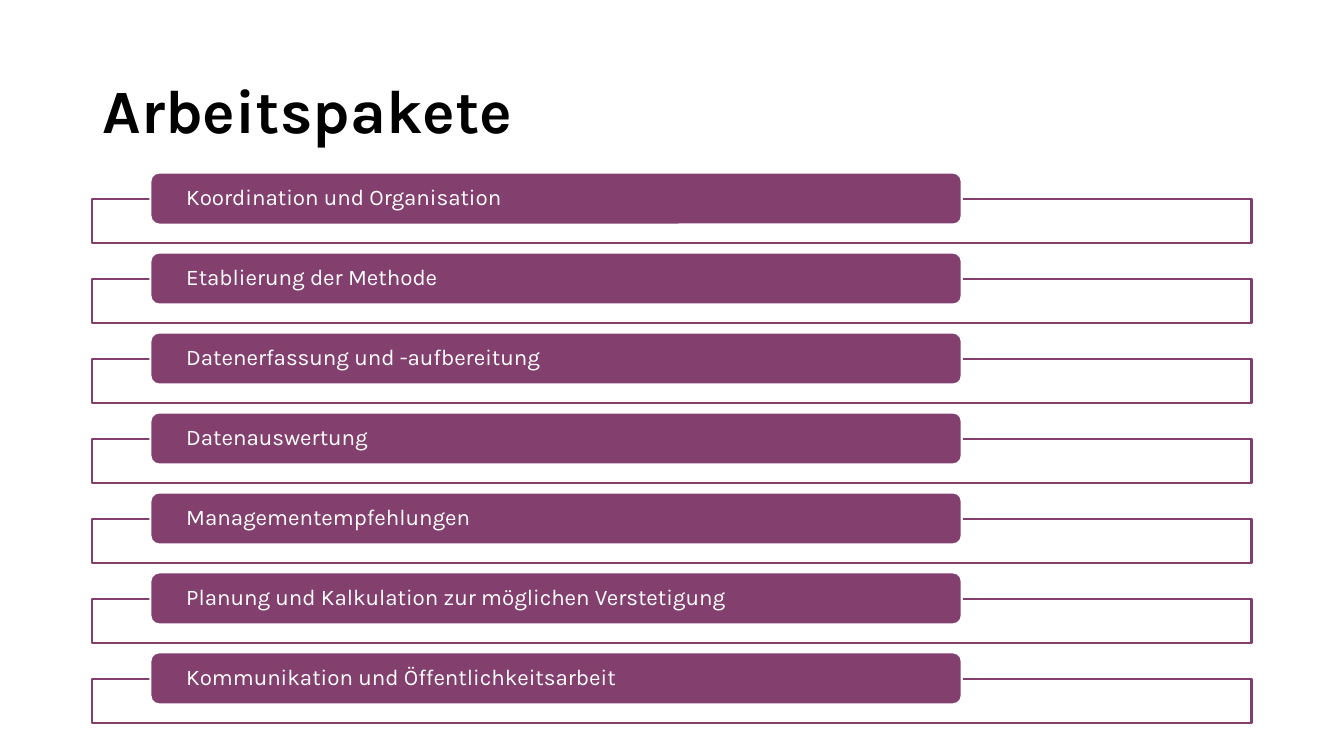
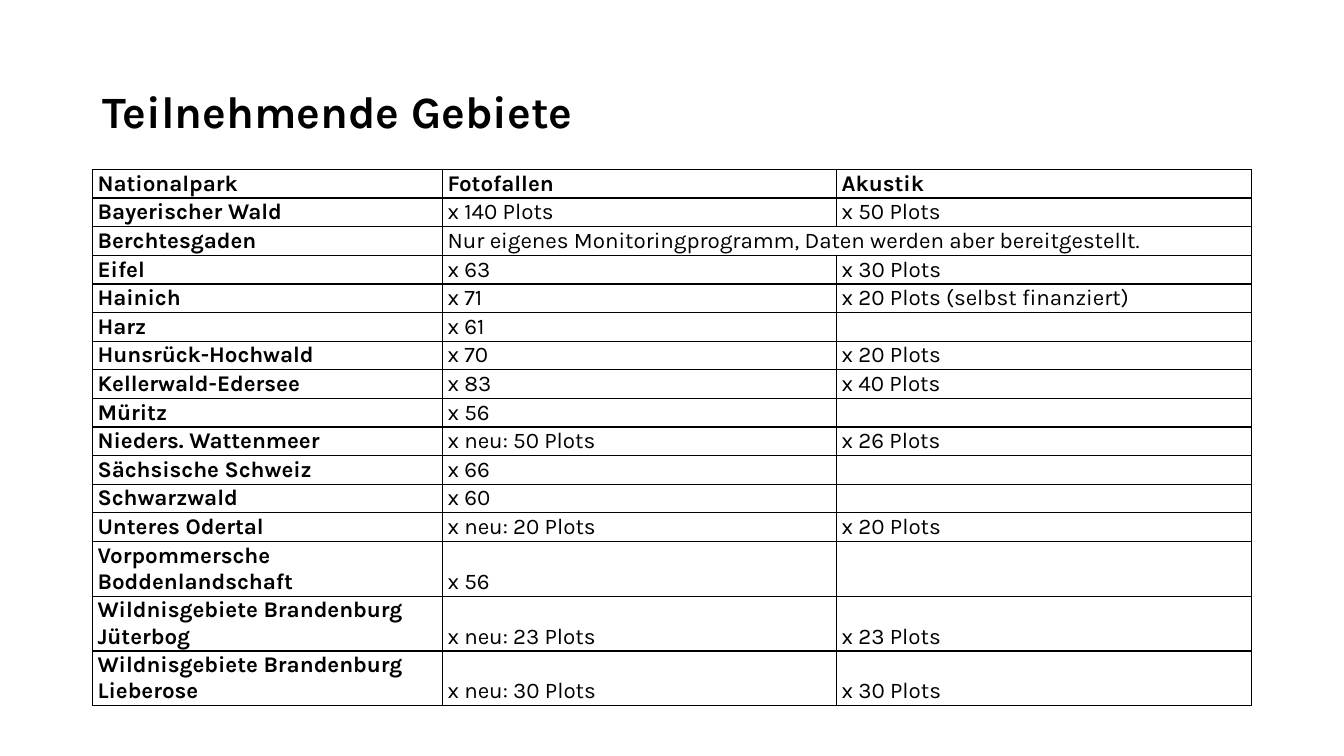
from lxml import etree
from pptx import Presentation
from pptx.dml.color import RGBColor
from pptx.enum.shapes import MSO_SHAPE
from pptx.enum.text import MSO_ANCHOR, MSO_AUTO_SIZE, PP_ALIGN
from pptx.oxml.ns import qn
from pptx.util import Cm, Pt

RECTANGLE = MSO_SHAPE.RECTANGLE
ROUNDED = MSO_SHAPE.ROUNDED_RECTANGLE
MIDDLE, BOTTOM = MSO_ANCHOR.MIDDLE, MSO_ANCHOR.BOTTOM
LEFT = PP_ALIGN.LEFT
NO_AUTOFIT = MSO_AUTO_SIZE.NONE

PLUM = RGBColor(0x83, 0x40, 0x6F)
WHITE = RGBColor(0xFF, 0xFF, 0xFF)
BLACK = RGBColor(0x00, 0x00, 0x00)
FONT = "Karla"
BODY_SIZE = Pt(16)
TITLE_ONLY = 5

MARGIN_LEFT = Cm(2.33)
CONTENT_WIDTH = Cm(29.21)

WORK_PACKAGES = [
    "Koordination und Organisation",
    "Etablierung der Methode",
    "Datenerfassung und -aufbereitung",
    "Datenauswertung",
    "Managementempfehlungen",
    "Planung und Kalkulation zur möglichen Verstetigung",
    "Kommunikation und Öffentlichkeitsarbeit",
]

AREAS = [
    ("Nationalpark", "Fotofallen", "Akustik"),
    ("Bayerischer Wald", "x 140 Plots", "x 50 Plots"),
    ("Berchtesgaden", "Nur eigenes Monitoringprogramm, Daten werden aber bereitgestellt."),
    ("Eifel", "x 63", "x 30 Plots"),
    ("Hainich", "x 71", "x 20 Plots (selbst finanziert)"),
    ("Harz", "x 61", ""),
    ("Hunsrück-Hochwald", "x 70", "x 20 Plots"),
    ("Kellerwald-Edersee", "x 83", "x 40 Plots"),
    ("Müritz", "x 56", ""),
    ("Nieders. Wattenmeer", "x neu: 50 Plots", "x 26 Plots"),
    ("Sächsische Schweiz", "x 66", ""),
    ("Schwarzwald", "x 60", ""),
    ("Unteres Odertal", "x neu: 20 Plots", "x 20 Plots"),
    ("Vorpommersche Boddenlandschaft", "x 56", ""),
    ("Wildnisgebiete Brandenburg Jüterbog", "x neu: 23 Plots", "x 23 Plots"),
    ("Wildnisgebiete Brandenburg Lieberose", "x neu: 30 Plots", "x 30 Plots"),
]
COLUMN_SHARES = (0.302, 0.34, 0.358)
LINE_HEIGHT, DOUBLE_HEIGHT = Cm(0.71), Cm(1.37)
ONE_LINE_CHARS = 25


def style_paragraph(paragraph, size, color, bold=False):
    """Set the shared typeface with a given size, colour and weight."""
    paragraph.alignment = LEFT
    font = paragraph.font
    font.name, font.size, font.bold = FONT, size, bold
    font.color.rgb = color


def add_titled_slide(prs, text, size):
    """Add a slide with the common title style."""
    slide = prs.slides.add_slide(prs.slide_layouts[TITLE_ONLY])
    title = slide.shapes.title
    title.left, title.top = MARGIN_LEFT, Cm(1.02)
    title.width, title.height = CONTENT_WIDTH, Cm(3.68)
    frame = title.text_frame
    frame.text = text
    frame.word_wrap = True
    frame.auto_size = NO_AUTOFIT
    frame.vertical_anchor = MIDDLE
    frame.paragraphs[0].line_spacing = 0.9
    style_paragraph(frame.paragraphs[0], size, BLACK, bold=True)
    return slide


def add_box(slide, kind, left, top, width, height, fill, line):
    """Add a filled and outlined shape without shadow."""
    box = slide.shapes.add_shape(kind, left, top, width, height)
    box.shadow.inherit = False
    box.fill.solid()
    box.fill.fore_color.rgb = fill
    box.line.color.rgb = line
    box.line.width = Pt(1.5)
    return box


def add_package_list(slide, packages, left, top, width, height):
    """Spread the work packages evenly over a box, each a label on a frame."""
    label_height, frame_offset, frame_height = Cm(1.31), Cm(0.66), Cm(1.12)
    pitch = (height - frame_offset - frame_height) / (len(packages) - 1)
    for index, package in enumerate(packages):
        row_top = round(top + index * pitch)
        add_box(slide, RECTANGLE, left, row_top + frame_offset, width, frame_height, WHITE, PLUM)
        label = add_box(slide, ROUNDED, left + Cm(1.46), row_top,
                        round(width * 0.7), label_height, PLUM, WHITE)
        text = label.text_frame
        text.text = package
        text.word_wrap = True
        text.vertical_anchor = MIDDLE
        text.margin_left = text.margin_right = Cm(0.84)
        text.margin_top = text.margin_bottom = 0
        text.paragraphs[0].line_spacing = 0.9
        style_paragraph(text.paragraphs[0], BODY_SIZE, WHITE)


def add_borders(cell):
    """Draw a thin black line on all four sides of a cell."""
    properties = cell._tc.get_or_add_tcPr()
    for side in ("a:lnL", "a:lnR", "a:lnT", "a:lnB"):
        line = etree.SubElement(properties, qn(side), w=str(Pt(1)))
        fill = etree.SubElement(line, qn("a:solidFill"))
        etree.SubElement(fill, qn("a:srgbClr"), val=str(BLACK))


def fill_cell(cell, text, bold):
    """Write and format one table cell."""
    add_borders(cell)
    cell.fill.background()
    cell.vertical_anchor = BOTTOM
    cell.margin_left = cell.margin_right = Cm(0.13)
    cell.margin_top = cell.margin_bottom = Cm(0.03)
    cell.text = text
    paragraph = cell.text_frame.paragraphs[0]
    style_paragraph(paragraph, BODY_SIZE, BLACK, bold)
    if not text:
        ending = etree.SubElement(paragraph._p, qn("a:endParaRPr"), sz="1600")
        etree.SubElement(ending, qn("a:latin"), typeface=FONT)


def add_area_table(slide, areas, left, top, width):
    """Add the table of areas, joining the last cells of short rows."""
    heights = [DOUBLE_HEIGHT if len(area[0]) > ONE_LINE_CHARS else LINE_HEIGHT
               for area in areas]
    columns = len(COLUMN_SHARES)
    table = slide.shapes.add_table(len(areas), columns, left, top, width, sum(heights)).table
    table.first_row = table.horz_banding = False
    for column, share in zip(table.columns, COLUMN_SHARES):
        column.width = round(width * share)
    for row, (area, height) in enumerate(zip(areas, heights)):
        table.rows[row].height = height
        for column in range(columns):
            text = area[column] if column < len(area) else ""
            fill_cell(table.cell(row, column), text, bold=row == 0 or column == 0)
        if len(area) < columns:
            table.cell(row, len(area) - 1).merge(table.cell(row, columns - 1))


def main():
    """Build and save the presentation."""
    prs = Presentation()
    prs.slide_width, prs.slide_height = Cm(33.87), Cm(19.05)
    packages = add_titled_slide(prs, "Arbeitspakete", Pt(44))
    add_package_list(packages, WORK_PACKAGES, MARGIN_LEFT, Cm(4.35), CONTENT_WIDTH, Cm(13.87))
    areas = add_titled_slide(prs, "Teilnehmende Gebiete", Pt(32))
    add_area_table(areas, AREAS, MARGIN_LEFT, Cm(4.27), CONTENT_WIDTH)
    prs.save("out.pptx")


if __name__ == "__main__":
    main()
